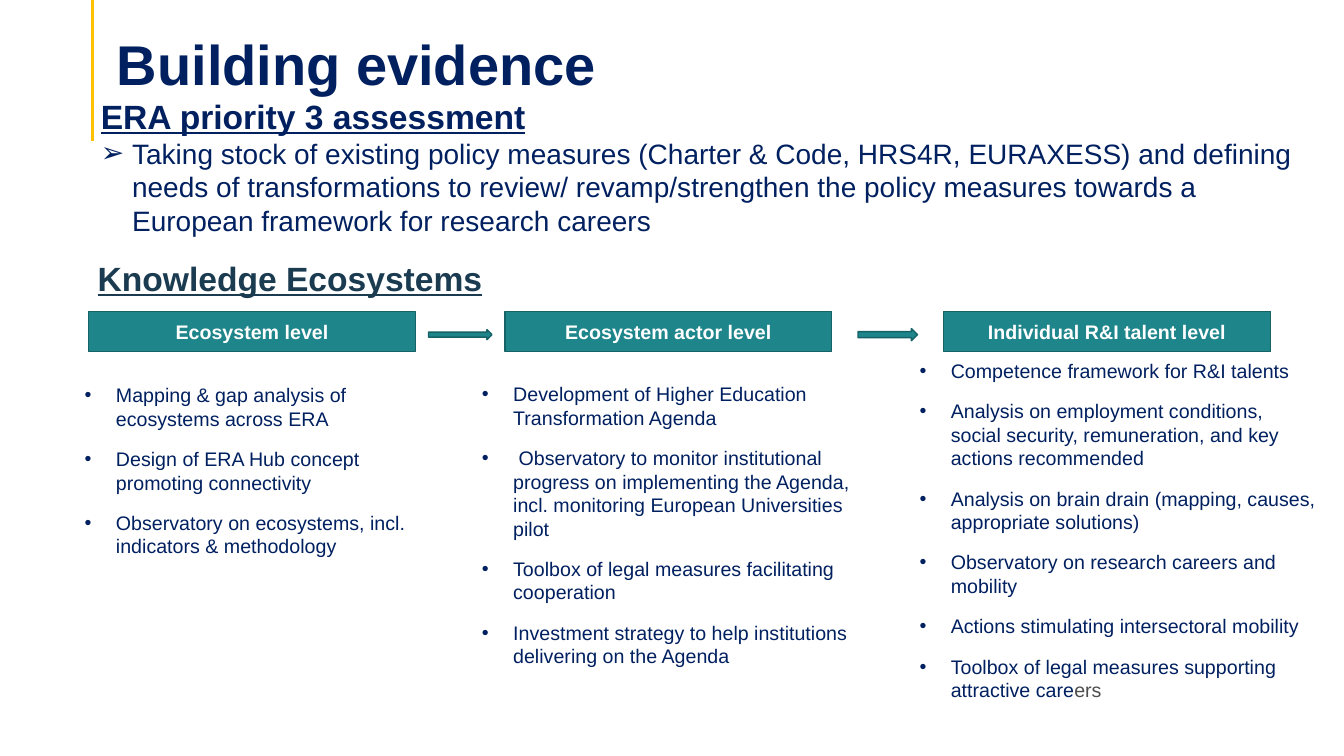
from lxml import etree
from pptx import Presentation
from pptx import util as u
from pptx.dml.color import RGBColor
from pptx.enum import shapes, text
from pptx.oxml.ns import qn

NAVY = RGBColor(0x00, 0x20, 0x60)
SLATE = RGBColor(0x1B, 0x3B, 0x51)
TEAL = RGBColor(0x1E, 0x85, 0x8B)
DARK_TEAL = RGBColor(0x16, 0x62, 0x67)
GOLD = RGBColor(0xFF, 0xC0, 0x00)
GREY = RGBColor(0x4D, 0x4D, 0x4D)
WHITE = RGBColor(0xFF, 0xFF, 0xFF)

LEVELS = [
    ("Ecosystem level", 0.88, (0.74, 3.75, 3.83, 1.85), [
        "Mapping & gap analysis of ecosystems across ERA",
        "Design of ERA Hub concept promoting connectivity",
        "Observatory on ecosystems, incl. indicators & methodology",
    ]),
    ("Ecosystem actor level", 5.01, (4.68, 3.74, 3.96, 2.96), [
        "Development of Higher Education Transformation Agenda",
        " Observatory to monitor institutional progress on implementing the Agenda, "
        "incl. monitoring European Universities pilot",
        "Toolbox of legal measures facilitating cooperation",
        "Investment strategy to help institutions delivering on the Agenda",
    ]),
    ("Individual R&I talent level", 9.36, (9.02, 3.51, 4.16, 3.53), [
        "Competence framework for R&I talents",
        "Analysis on employment conditions, social security, remuneration, "
        "and key actions recommended",
        "Analysis on brain drain (mapping, causes, appropriate solutions)",
        "Observatory on research careers and mobility",
        "Actions stimulating intersectoral mobility",
        "Toolbox of legal measures supporting attractive care",
    ]),
]
ARROWS = [(4.25, 3.27, 0.63, 0.1), (8.51, 3.26, 0.59, 0.12)]


def place(shape, box, anchor):
    shape.left, shape.top, shape.width, shape.height = map(u.Inches, box)
    frame = shape.text_frame
    frame.word_wrap = True
    frame.auto_size = text.MSO_AUTO_SIZE.NONE
    frame.vertical_anchor = anchor
    return frame


def style(paragraph, size, color, bold=False, underline=False, bullet=None):
    if bullet:
        properties = paragraph._p.get_or_add_pPr()
        properties.set("marL", str(u.Inches(0.31)))
        properties.set("indent", str(u.Inches(-0.31)))
        etree.SubElement(properties, qn("a:buFont")).set("typeface", "Arial")
        etree.SubElement(properties, qn("a:buChar")).set("char", bullet)
    paragraph.space_before = u.Pt(0)
    font = paragraph.font
    font.name = "Arial"
    font.size = u.Pt(size)
    font.bold = bold
    font.underline = underline
    font.color.rgb = color


presentation = Presentation()
presentation.slide_width = u.Inches(13.33)
presentation.slide_height = u.Inches(7.5)
slide = presentation.slides.add_slide(presentation.slide_layouts.get_by_name("Comparison"))
title, assessment, *columns = slide.placeholders

accent = slide.shapes.add_connector(
    shapes.MSO_CONNECTOR.STRAIGHT, u.Inches(0.92), 0, u.Inches(0.92), u.Inches(1.4))
accent.line.color.rgb = GOLD
accent.line.width = u.Pt(2.25)
etree.SubElement(accent._element.spPr, qn("a:effectLst"))

frame = place(title, (1.06, 0.11, 12.07, 0.86), text.MSO_ANCHOR.BOTTOM)
frame.margin_bottom = 0
frame.text = "Building evidence"
paragraph = frame.paragraphs[0]
paragraph.alignment = text.PP_ALIGN.LEFT
paragraph.line_spacing = 0.9
style(paragraph, 40, NAVY, bold=True)

frame = place(assessment, (0.9, 0.9, 12.27, 1.51), text.MSO_ANCHOR.TOP)
frame.text = "ERA priority 3 assessment"
style(frame.paragraphs[0], 24, NAVY, bold=True, underline=True)
paragraph = frame.add_paragraph()
paragraph.text = (
    "Taking stock of existing policy measures (Charter & Code, HRS4R, EURAXESS) and defining "
    "needs of transformations to review/ revamp/strengthen the policy measures towards a "
    "European framework for research careers")
style(paragraph, 20, NAVY, bullet="➢")

heading = slide.shapes.add_textbox(*map(u.Inches, (0.87, 2.55, 4.06, 0.46)))
heading.text_frame.word_wrap = False
heading.text_frame.text = "Knowledge Ecosystems"
paragraph = heading.text_frame.paragraphs[0]
paragraph.line_spacing = 0.9
style(paragraph, 24, SLATE, bold=True, underline=True)

blocks = []
for (label, left, list_box, items), column in zip(LEVELS, columns):
    level = slide.shapes.add_shape(
        shapes.MSO_SHAPE.RECTANGLE, *map(u.Inches, (left, 3.09, 3.24, 0.4)))
    level.text_frame.text = label
    level.text_frame.vertical_anchor = text.MSO_ANCHOR.MIDDLE
    paragraph = level.text_frame.paragraphs[0]
    paragraph.alignment = text.PP_ALIGN.CENTER
    style(paragraph, 14, WHITE, bold=True)
    blocks.append(level)

    frame = place(column, list_box, text.MSO_ANCHOR.TOP)
    frame.text = "\n".join(items)
    for paragraph in frame.paragraphs:
        style(paragraph, 14, NAVY, bullet="•")
        paragraph.space_after = u.Pt(12)

ending = paragraph.add_run()
ending.text = "ers"
ending.font.color.rgb = GREY

for box in ARROWS:
    blocks.append(slide.shapes.add_shape(shapes.MSO_SHAPE.RIGHT_ARROW, *map(u.Inches, box)))

for block in blocks:
    block.shadow.inherit = False
    block.fill.solid()
    block.fill.fore_color.rgb = TEAL
    block.line.color.rgb = DARK_TEAL
    block.line.width = u.Pt(1)

presentation.save("out.pptx")
